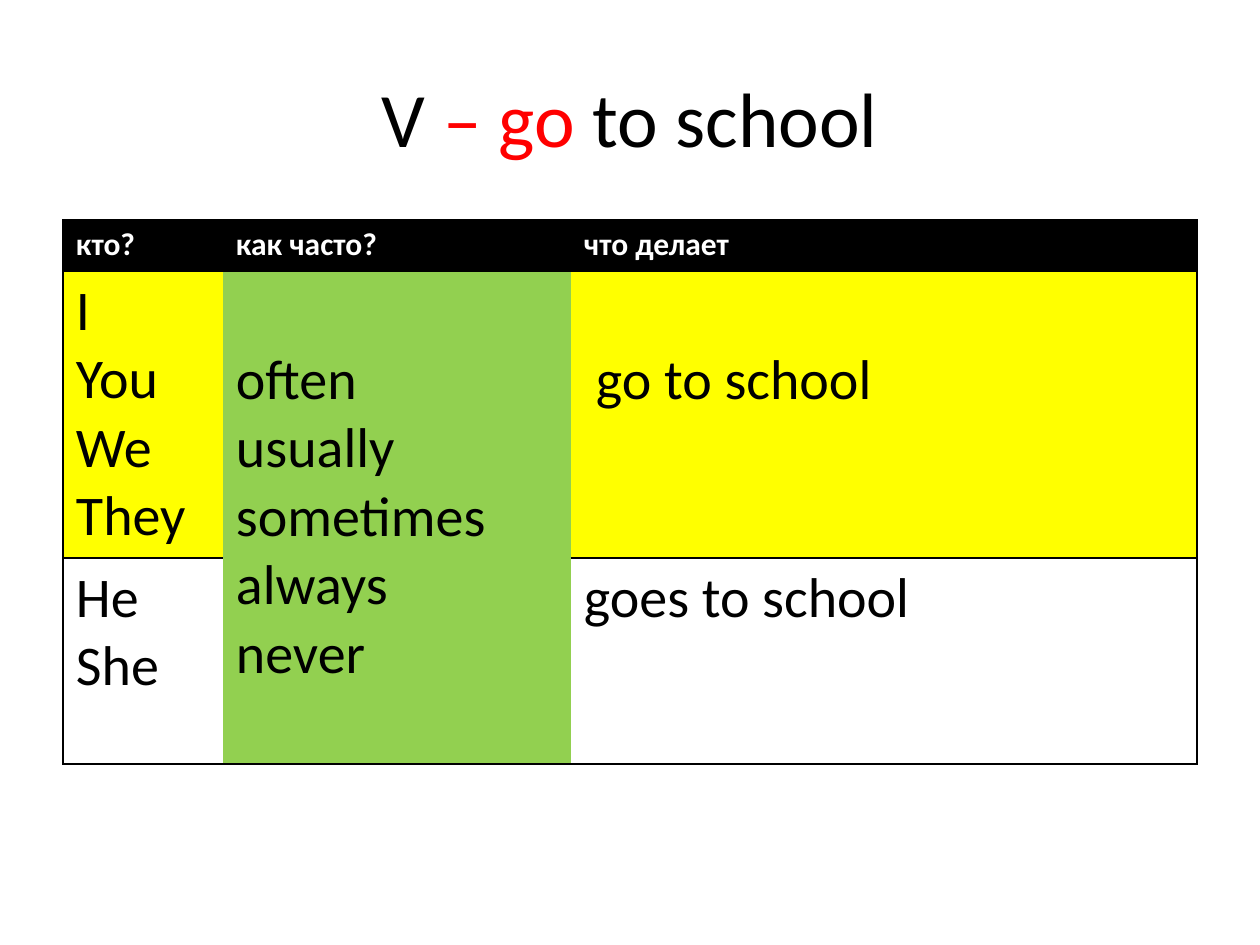
from dataclasses import dataclass

from lxml import etree
from pptx import Presentation
from pptx.dml.color import RGBColor
from pptx.enum.text import MSO_ANCHOR, PP_ALIGN
from pptx.oxml.ns import qn
from pptx.util import Emu, Pt

MIDDLE = MSO_ANCHOR.MIDDLE
LEFT, CENTER = PP_ALIGN.LEFT, PP_ALIGN.CENTER

BLACK = RGBColor(0, 0, 0)
WHITE = RGBColor(255, 255, 255)
RED = RGBColor(255, 0, 0)
YELLOW = RGBColor(255, 255, 0)
GREEN = RGBColor(0x92, 0xD0, 0x50)

FONT = "Calibri"
PLAIN_STYLE = "{2D5ABB26-0587-4C30-8999-92F81FD0307C}"
COLS = (160, 348, 626)
ROWS = (51, 287, 206)
PAD_X, PAD_Y = 13, 6


def px(n: int) -> Emu:
    return Emu(round(n * 914400 / 126))


@dataclass
class Cell:
    row: int
    col: int
    lines: tuple
    fill: RGBColor
    size: int = 32
    color: RGBColor = BLACK
    bold: bool = False
    drop: int = 0    # extra space above the text
    shift: int = 0   # extra space left of the text
    span: int = 1


CELLS = [
    *(Cell(0, i, (head,), BLACK, 18, WHITE, True)
      for i, head in enumerate(("кто?", "как часто?", "что делает"))),
    Cell(1, 0, ("I", "You", "We", "They"), YELLOW),
    Cell(1, 1, ("often", "usually", "sometimes", "always", "never"), GREEN,
         drop=69, span=2),
    Cell(1, 2, ("go to school",), YELLOW, drop=69, shift=12),
    Cell(2, 0, ("He", "She"), WHITE),
    Cell(2, 2, ("goes to school",), WHITE),
]


def write(frame, lines, *, size: int, color: RGBColor = BLACK,
          bold: bool = False, align=LEFT) -> None:
    """Each line is a string or a list of (text, color) runs."""
    for i, line in enumerate(lines):
        para = frame.add_paragraph() if i else frame.paragraphs[0]
        para.alignment = align
        for text, tint in [(line, color)] if isinstance(line, str) else line:
            run = para.add_run()
            run.text = text
            font = run.font
            font.name, font.size, font.bold = FONT, Pt(size), bold
            font.color.rgb = tint


def rule(box, sides: str) -> None:
    """Draw thin black borders on the given sides of a cell."""
    props = box._tc.get_or_add_tcPr()
    for side in sides:
        line = etree.SubElement(props, qn(f"a:ln{side}"), w=str(Pt(1)))
        fill = etree.SubElement(line, qn("a:solidFill"))
        etree.SubElement(fill, qn("a:srgbClr"), val=str(BLACK))


def draw(grid, cell: Cell) -> None:
    box = grid.cell(cell.row, cell.col)
    if cell.span > 1:
        last = grid.cell(cell.row + cell.span - 1, cell.col)
        box.merge(last)
        rule(last, "B")
    edge = {0: "L", len(COLS) - 1: "R"}.get(cell.col, "")
    rule(box, edge + "TB")
    box.fill.solid()
    box.fill.fore_color.rgb = cell.fill
    box.margin_left, box.margin_right = px(PAD_X + cell.shift), px(PAD_X)
    box.margin_top, box.margin_bottom = px(PAD_Y + cell.drop), px(PAD_Y)
    write(box.text_frame, cell.lines, size=cell.size, color=cell.color,
          bold=cell.bold)


def main() -> None:
    deck = Presentation()
    deck.slide_width, deck.slide_height = px(1260), px(945)
    slide = deck.slides.add_slide(deck.slide_layouts[6])

    # Title
    frame = slide.shapes.add_textbox(
        px(63), px(38), px(1134), px(157)).text_frame
    frame.word_wrap = True
    frame.vertical_anchor = MIDDLE
    title = [("V", BLACK), (" – go ", RED), ("to school", BLACK)]
    write(frame, [title], size=44, align=CENTER)

    # Table
    grid = slide.shapes.add_table(
        len(ROWS), len(COLS), px(63), px(220),
        px(sum(COLS)), px(sum(ROWS))).table
    grid.horz_banding = False
    grid._tbl.tblPr.find(qn("a:tableStyleId")).text = PLAIN_STYLE
    for col, width in zip(grid.columns, COLS):
        col.width = px(width)
    for row, height in zip(grid.rows, ROWS):
        row.height = px(height)
    for cell in CELLS:
        draw(grid, cell)

    deck.save("out.pptx")


if __name__ == "__main__":
    main()
